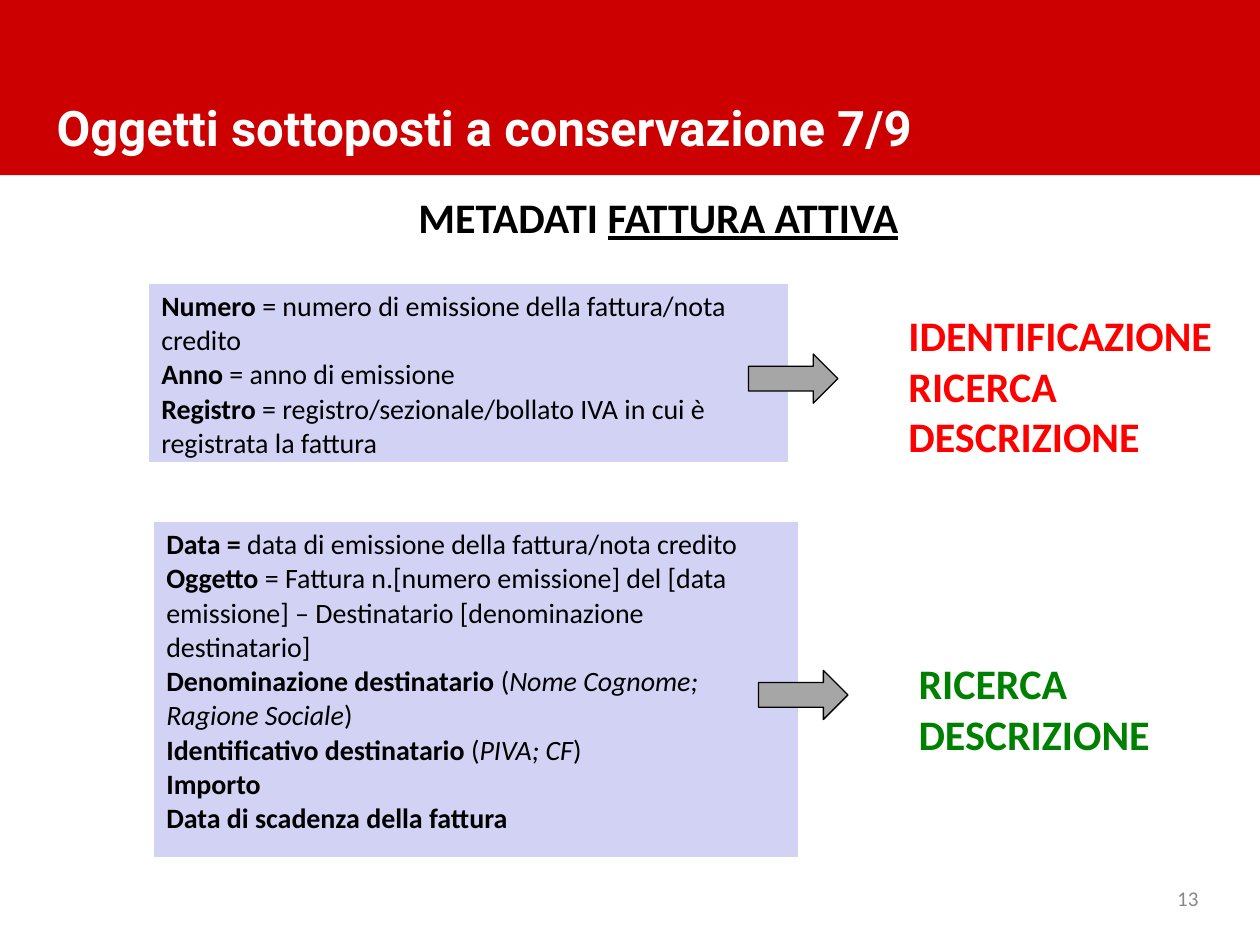
from dataclasses import dataclass

from lxml import etree
from pptx import Presentation
from pptx.dml.color import RGBColor
from pptx.enum.shapes import MSO_SHAPE
from pptx.enum.text import MSO_ANCHOR, MSO_AUTO_SIZE, PP_ALIGN
from pptx.oxml.ns import qn
from pptx.util import Inches, Pt

RECTANGLE = MSO_SHAPE.RECTANGLE
RIGHT_ARROW = MSO_SHAPE.RIGHT_ARROW
TOP, MIDDLE = MSO_ANCHOR.TOP, MSO_ANCHOR.MIDDLE
LEFT, CENTER, RIGHT = PP_ALIGN.LEFT, PP_ALIGN.CENTER, PP_ALIGN.RIGHT
NO_AUTOFIT = MSO_AUTO_SIZE.NONE


@dataclass(frozen=True)
class Theme:
    title_font: str = "Roboto"
    body_font: str = "Calibri"
    title_size: int = 28
    heading_size: int = 24
    table_size: int = 16
    number_size: int = 12
    white: str = "FFFFFF"
    black: str = "000000"
    band: str = "CC0000"
    cell: str = "D2D2F4"
    arrow: str = "A6A6A6"
    identification: str = "FF0000"
    search: str = "008000"
    number: str = "898989"


THEME = Theme()

IDENTIFICATION_FIELDS = [
    [("Numero", "b"), (" = numero di emissione della fattura/nota credito", "")],
    [("Anno", "b"), (" = anno di emissione", "")],
    [("Registro ", "b"),
     ("= registro/sezionale/bollato IVA in cui è registrata la fattura", "")],
]
SEARCH_FIELDS = [
    [("Data = ", "b"), ("data di emissione della fattura/nota credito", "")],
    [("Oggetto", "b"),
     (" = Fattura n.[numero emissione] del [data emissione]"
      " – Destinatario [denominazione destinatario]", "")],
    [("Denominazione destinatario ", "b"), ("(", ""),
     ("Nome Cognome; Ragione Sociale", "i"), (")", "")],
    [("Identificativo destinatario ", "b"), ("(", ""), ("PIVA; CF", "i"), (")", "")],
    [("Importo", "b")],
    [("Data di scadenza della fattura", "b")],
]


def place(shape, left, top, width, height):
    shape.left, shape.top = Inches(left), Inches(top)
    shape.width, shape.height = Inches(width), Inches(height)


def write_text(frame, paragraphs, size, color=THEME.black, font=THEME.body_font,
               align=LEFT, anchor=TOP):
    frame.word_wrap = True
    frame.vertical_anchor = anchor
    for index, runs in enumerate(paragraphs):
        paragraph = frame.paragraphs[0] if index == 0 else frame.add_paragraph()
        paragraph.alignment = align
        for text, style in runs:
            run = paragraph.add_run()
            run.text = text
            run.font.name = font
            run.font.size = Pt(size)
            run.font.color.rgb = RGBColor.from_string(color)
            run.font.bold = "b" in style
            run.font.italic = "i" in style
            run.font.underline = "u" in style


def add_box(slide, bounds, paragraphs, size, indent=0.1, **text_format):
    shape = slide.shapes.add_textbox(*map(Inches, bounds))
    shape.text_frame.margin_left = Inches(indent)
    write_text(shape.text_frame, paragraphs, size, **text_format)


def add_purposes(slide, bounds, indent, purposes, color):
    paragraphs = [[(purpose, "b")] for purpose in purposes]
    add_box(slide, bounds, paragraphs, THEME.heading_size, indent, color=color)


def add_filled_shape(slide, kind, bounds, color, outlined=False):
    shape = slide.shapes.add_shape(kind, *map(Inches, bounds))
    shape.shadow.inherit = False
    shape.fill.solid()
    shape.fill.fore_color.rgb = RGBColor.from_string(color)
    if outlined:
        shape.line.color.rgb = RGBColor.from_string(THEME.black)
        shape.line.width = Pt(0.75)
    else:
        shape.line.fill.background()
    return shape


def add_arrow(slide, left, top):
    add_filled_shape(slide, RIGHT_ARROW, (left, top, 0.71, 0.39), THEME.arrow,
                     outlined=True)


def set_borders(cell):
    properties = cell._tc.get_or_add_tcPr()
    for side, width in (("L", 1), ("R", 1), ("T", 1), ("B", 3)):
        line = etree.SubElement(properties, qn(f"a:ln{side}"), w=str(Pt(width)))
        fill = etree.SubElement(line, qn("a:solidFill"))
        etree.SubElement(fill, qn("a:srgbClr"), val=THEME.white)


def add_field_table(slide, bounds, fields):
    table = slide.shapes.add_table(1, 1, *map(Inches, bounds)).table
    table.first_row = False
    table.horz_banding = False
    cell = table.cell(0, 0)
    set_borders(cell)
    cell.fill.solid()
    cell.fill.fore_color.rgb = RGBColor.from_string(THEME.cell)
    write_text(cell.text_frame, fields, THEME.table_size)


def fill_title(slide, text):
    title = slide.shapes.title
    place(title, 0.35, 0.68, 8.99, 0.66)
    title.text_frame.auto_size = NO_AUTOFIT
    write_text(title.text_frame, [[(text, "b")]], THEME.title_size,
               color=THEME.white, font=THEME.title_font, anchor=MIDDLE)
    band = add_filled_shape(slide, RECTANGLE, (0, 0, 10.04, 1.39), THEME.band)
    title.element.addprevious(band.element)


def fill_heading(slide, runs):
    body = slide.placeholders[1]
    place(body, 0.55, 1.47, 9.35, 5.86)
    frame = body.text_frame
    frame.auto_size = NO_AUTOFIT
    properties = frame.paragraphs[0]._p.get_or_add_pPr()
    properties.set("marL", "0")
    properties.set("indent", "0")
    etree.SubElement(properties, qn("a:buNone"))
    frame.paragraphs[0].space_before = Pt(0)
    write_text(frame, [runs], THEME.heading_size, align=CENTER)


def main():
    presentation = Presentation()
    presentation.slide_width = Inches(10)
    presentation.slide_height = Inches(7.5)
    slide = presentation.slides.add_slide(presentation.slide_layouts[1])

    fill_title(slide, "Oggetti sottoposti a conservazione 7/9")
    fill_heading(slide, [("METADATI ", "b"), ("FATTURA ATTIVA", "bu")])
    add_box(slide, (9.17, 6.93, 0.44, 0.4), [[("13", "")]], THEME.number_size,
            color=THEME.number, align=RIGHT, anchor=MIDDLE)

    add_field_table(slide, (1.18, 2.25, 5.08, 1.43), IDENTIFICATION_FIELDS)
    add_field_table(slide, (1.22, 4.14, 5.12, 2.68), SEARCH_FIELDS)

    add_purposes(slide, (6.97, 5.17, 2.67, 0.91), 0.32,
                 ["RICERCA", "DESCRIZIONE"], THEME.search)
    add_arrow(slide, 6.02, 5.32)
    add_arrow(slide, 5.94, 2.81)
    add_purposes(slide, (6.73, 2.41, 3.14, 1.31), 0.48,
                 ["IDENTIFICAZIONE", "RICERCA", "DESCRIZIONE"], THEME.identification)

    presentation.save("out.pptx")


if __name__ == "__main__":
    main()
